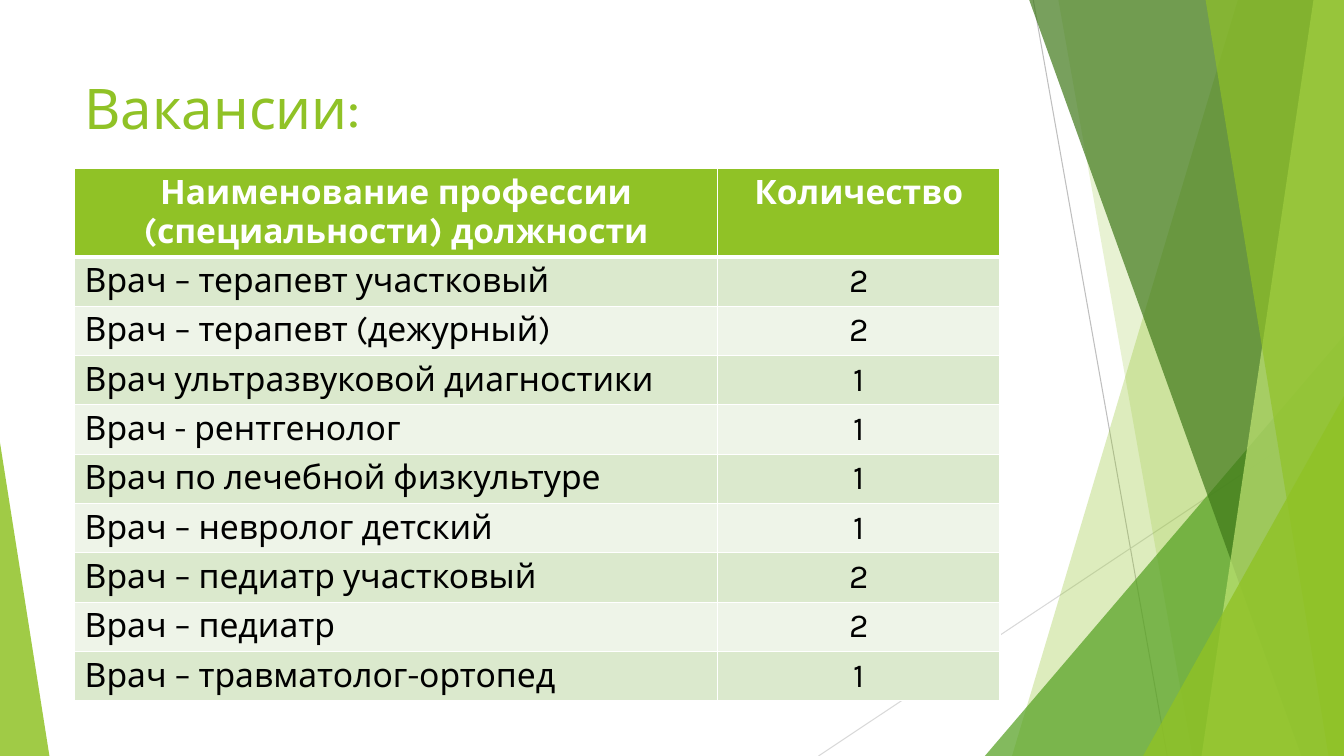
from lxml.etree import SubElement
from pptx import Presentation
from pptx.dml.color import RGBColor
from pptx.enum.shapes import MSO_CONNECTOR, MSO_SHAPE
from pptx.enum.text import MSO_ANCHOR, MSO_AUTO_SIZE, PP_ALIGN
from pptx.oxml.ns import qn
from pptx.util import Inches, Pt

COLORS = {
    "green": "90C226", "leaf": "54A021", "forest": "3F7819", "lime": "C0E474",
    "gray": "BFBFBF", "silver": "D9D9D9", "white": "FFFFFF", "black": "000000",
    "band": "DBE9CD", "pale": "EEF4E8",
}
HEADER = ("Наименование профессии (специальности) должности", "Количество")
VACANCIES = [
    ("Врач – терапевт участковый", 2),
    ("Врач – терапевт (дежурный)", 2),
    ("Врач ультразвуковой диагностики", 1),
    ("Врач - рентгенолог", 1),
    ("Врач по лечебной физкультуре", 1),
    ("Врач – невролог детский", 1),
    ("Врач – педиатр участковый", 2),
    ("Врач – педиатр", 2),
    ("Врач – травматолог-ортопед", 1),
]


class SlideBuilder:
    """Draws styled elements placed by percentages of the slide's size."""

    def __init__(self, presentation, font="Karla"):
        self.width, self.height = presentation.slide_width, presentation.slide_height
        self.font = font
        self.slide = presentation.slides.add_slide(presentation.slide_layouts[5])
        self.shapes = self.slide.shapes

    def across(self, share):
        return round(self.width * share / 100)

    def down(self, share):
        return round(self.height * share / 100)

    def color(self, name):
        return RGBColor.from_string(COLORS[name])

    def fill(self, shape, color, opacity):
        shape.shadow.inherit = False
        shape.line.fill.background()
        shape.fill.solid()
        shape.fill.fore_color.rgb = self.color(color)
        color_element = shape.fill._xPr.find(qn("a:solidFill"))[0]
        SubElement(color_element, qn("a:alpha"), val=str(opacity * 1000))

    def line(self, start, end, color):
        connector = self.shapes.add_connector(
            MSO_CONNECTOR.STRAIGHT, self.across(start[0]), self.down(start[1]),
            self.across(end[0]), self.down(end[1]))
        connector.line.color.rgb = self.color(color)
        connector.line.width = Pt(0.75)
        SubElement(connector._element.spPr, qn("a:effectLst"))

    def ribbon(self, top_left, bottom_left, color, opacity):
        corners = [(100, 0), (100, 100), (bottom_left, 100)]
        builder = self.shapes.build_freeform(self.across(top_left), 0)
        builder.add_line_segments([(self.across(x), self.down(y)) for x, y in corners])
        self.fill(builder.convert_to_shape(), color, opacity)

    def triangle(self, left, top, width, apex, color, opacity):
        shape = self.shapes.add_shape(
            MSO_SHAPE.ISOSCELES_TRIANGLE, self.across(left), self.down(top),
            self.across(width), self.down(100 - top))
        shape.adjustments[0] = apex
        self.fill(shape, color, opacity)

    def text(self, frame, text, size, color, align=PP_ALIGN.LEFT, bold=False):
        paragraph = frame.paragraphs[0]
        paragraph.alignment = align
        run = paragraph.add_run()
        run.text = text
        run.font.name, run.font.size, run.font.bold = self.font, Pt(size), bold
        run.font.color.rgb = self.color(color)

    def title(self, text, left, top, width, height):
        shape = self.shapes.title
        shape.left, shape.top = self.across(left), self.down(top)
        shape.width, shape.height = self.across(width), self.down(height)
        frame = shape.text_frame
        frame.word_wrap = True
        frame.auto_size = MSO_AUTO_SIZE.NONE
        frame.vertical_anchor = MSO_ANCHOR.MIDDLE
        self.text(frame, text, 40, "green")

    def cell(self, cell, text, background, color, align, bold):
        properties = cell._tc.get_or_add_tcPr()
        for side in "LRTB":
            width = Pt(3) if bold and side == "B" else Pt(1)
            border = SubElement(properties, qn(f"a:ln{side}"), w=str(width))
            border_fill = SubElement(border, qn("a:solidFill"))
            SubElement(border_fill, qn("a:srgbClr"), val=COLORS["white"])
        cell.fill.solid()
        cell.fill.fore_color.rgb = self.color(background)
        self.text(cell.text_frame, text, 24, color, align, bold)

    def table(self, rows, left, top, columns, header_height, row_height):
        heights = [header_height] + [row_height] * (len(rows) - 1)
        table = self.shapes.add_table(
            len(rows), len(columns), self.across(left), self.down(top),
            self.across(sum(columns)), self.down(sum(heights))).table
        for column, width in zip(table.columns, columns):
            column.width = self.across(width)
        for index, (values, height) in enumerate(zip(rows, heights)):
            table.rows[index].height = self.down(height)
            header = index == 0
            background = "green" if header else "band" if index % 2 else "pale"
            for position, value in enumerate(values):
                align = PP_ALIGN.CENTER if header or position else PP_ALIGN.LEFT
                self.cell(table.cell(index, position), str(value), background,
                          "white" if header else "black", align, header)


def main():
    presentation = Presentation()
    presentation.slide_width, presentation.slide_height = Inches(13.33), Inches(7.5)
    builder = SlideBuilder(presentation)
    builder.line((76.88, 0), (86.85, 100), "gray")
    builder.line((100, 53.73), (60.9, 100), "silver")
    builder.ribbon(92.1, 75.3, "green", 30)
    builder.ribbon(78.75, 88.72, "green", 20)
    builder.triangle(73.28, 44.4, 26.72, 1, "leaf", 72)
    builder.ribbon(76.58, 96.83, "forest", 70)
    builder.ribbon(97.73, 89.4, "lime", 70)
    builder.ribbon(89.7, 98.85, "green", 65)
    builder.triangle(85.05, 52.4, 14.95, 1, "green", 80)
    builder.triangle(0, 58.53, 3.68, 0, "green", 85)
    builder.title("Вакансии:", 5.55, 8.93, 70.5, 10.4)
    builder.table([HEADER] + VACANCIES, 5.55, 22.27, (47.85, 21), 11.6, 6.53)
    presentation.save("out.pptx")


if __name__ == "__main__":
    main()
